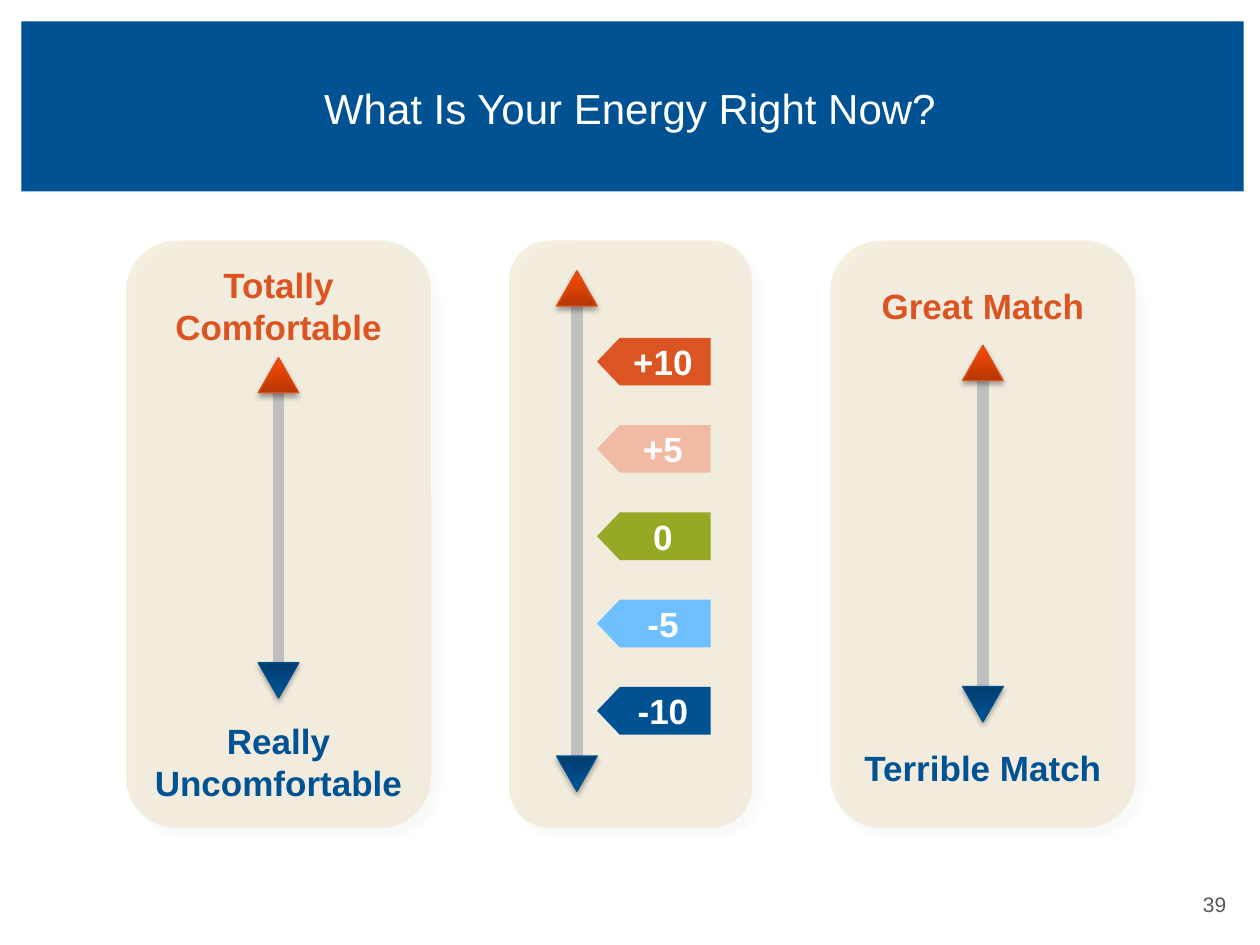
from lxml import etree
from pptx import Presentation
from pptx.dml.color import RGBColor
from pptx.enum.shapes import MSO_CONNECTOR, MSO_SHAPE
from pptx.enum.text import MSO_ANCHOR, PP_ALIGN
from pptx.oxml import parse_xml
from pptx.oxml.ns import nsdecls, qn
from pptx.util import Cm, Pt

RECTANGLE = MSO_SHAPE.RECTANGLE
ROUNDED = MSO_SHAPE.ROUNDED_RECTANGLE
TRIANGLE = MSO_SHAPE.ISOSCELES_TRIANGLE
TAG = MSO_SHAPE.FLOWCHART_OFFPAGE_CONNECTOR
STRAIGHT = MSO_CONNECTOR.STRAIGHT
MIDDLE = MSO_ANCHOR.MIDDLE
CENTER, RIGHT = PP_ALIGN.CENTER, PP_ALIGN.RIGHT

FONT = "Arial"
WHITE, GRAY, SHAFT = "FFFFFF", "595959", "BFBFBF"
BLUE, ORANGE, SAND = "005293", "DA5521", "EDE4CA"
ORANGE_HEAD = (("B73604", "EE4705", "F44501"), "DA511C")
BLUE_HEAD = (("003D6E", "004F8E", "00508F"), "005090")

PANEL_TOP, PANEL_HEIGHT = 4.85, 11.84
HEAD_WIDTH, HEAD_HEIGHT = 0.82, 0.71
TAG_WIDTH, TAG_HEIGHT = 2.29, 0.96
TAG_CENTER_X, FIRST_TAG_Y, TAG_PITCH = 13.18, 7.29, 1.76
LEVELS = (("+10", ORANGE), ("+5", "F1BAA5"), ("0", "97A825"),
          ("-5", "6EBFFF"), ("-10", BLUE))


def rgb(color):
    return RGBColor.from_string(color)


def add_block(slide, kind, left, top, width, height, color):
    block = slide.shapes.add_shape(kind, Cm(left), Cm(top), Cm(width), Cm(height))
    block.shadow.inherit = False
    block.fill.solid()
    block.fill.fore_color.rgb = rgb(color)
    block.line.fill.background()
    return block


def add_text(slide, text, left, top, width, height, size, color,
             bold=False, align=CENTER):
    box = slide.shapes.add_textbox(Cm(left), Cm(top), Cm(width), Cm(height))
    frame = box.text_frame
    frame.word_wrap = True
    frame.vertical_anchor = MIDDLE
    frame.text = text
    paragraph = frame.paragraphs[0]
    paragraph.alignment = align
    font = paragraph.runs[0].font
    font.name, font.size, font.bold = FONT, Pt(size), bold
    font.color.rgb = rgb(color)


def cast_shadow(block, opacity, blur, distance, angle):
    effects = block._element.spPr.find(qn("a:effectLst"))
    effects.append(parse_xml(
        f'<a:outerShdw {nsdecls("a")} blurRad="{Pt(blur)}" dist="{Pt(distance)}" '
        f'dir="{angle * 60000}" rotWithShape="0"><a:srgbClr val="000000">'
        f'<a:alpha val="{opacity * 1000}"/></a:srgbClr></a:outerShdw>'))


def shade(block, colors):
    """Fill from the base of the shape to its tip."""
    stops = "".join(f'<a:gs pos="{share * 1000}"><a:srgbClr val="{color}"/></a:gs>'
                    for share, color in zip((0, 80, 100), colors))
    solid = block._element.spPr.find(qn("a:solidFill"))
    solid.getparent().replace(solid, parse_xml(
        f'<a:gradFill {nsdecls("a")} rotWithShape="1"><a:gsLst>{stops}</a:gsLst>'
        '<a:lin ang="16200000" scaled="0"/></a:gradFill>'))


def add_panel(slide, left, width):
    panel = add_block(slide, ROUNDED, left, PANEL_TOP, width, PANEL_HEIGHT, SAND)
    color = panel._element.spPr.find(qn("a:solidFill"))[0]
    etree.SubElement(color, qn("a:alpha"), val="59000")
    cast_shadow(panel, 3, 4, 6, 45)


def add_head(slide, center_x, top, style, rotation):
    colors, outline = style
    head = add_block(slide, TRIANGLE, center_x - HEAD_WIDTH / 2, top,
                     HEAD_WIDTH, HEAD_HEIGHT, outline)
    head.rotation = rotation
    head.line.color.rgb = rgb(outline)
    head.line.width = Pt(0.75)
    shade(head, colors)
    cast_shadow(head, 35, 3.1, 1.8, 90)


def add_scale(slide, center_x, top, lower_head_top):
    """Vertical shaft with an orange head above and a blue head below."""
    shaft = slide.shapes.add_connector(STRAIGHT, Cm(center_x), Cm(top + HEAD_HEIGHT),
                                       Cm(center_x), Cm(lower_head_top))
    shaft.line.color.rgb = rgb(SHAFT)
    shaft.line.width = Pt(6.5)
    etree.SubElement(shaft._element.spPr, qn("a:effectLst"))
    add_head(slide, center_x, top, ORANGE_HEAD, 0)
    add_head(slide, center_x, lower_head_top, BLUE_HEAD, 180)


def add_labelled_panel(slide, left, scale, high, low, label_height):
    """high and low are (text, top) pairs."""
    width = 6.15
    center_x = left + width / 2
    add_panel(slide, left, width)
    add_scale(slide, center_x, *scale)
    for (text, top), label_width, color in ((high, 5.28, ORANGE), (low, 5.77, BLUE)):
        add_text(slide, text, center_x - label_width / 2, top,
                 label_width, label_height, 20, color, bold=True)


def add_level_panel(slide):
    add_panel(slide, 10.26, 4.9)
    add_scale(slide, 11.63, 5.46, 15.24)
    for index, (level, color) in enumerate(LEVELS):
        center_y = FIRST_TAG_Y + index * TAG_PITCH
        tag = add_block(slide, TAG, TAG_CENTER_X - TAG_HEIGHT / 2,
                        center_y - TAG_WIDTH / 2, TAG_HEIGHT, TAG_WIDTH, color)
        tag.rotation = 90
        add_text(slide, level, 12.4, center_y - 0.56, 1.93, 1.12, 20, WHITE, bold=True)


def main():
    deck = Presentation()
    deck.slide_width, deck.slide_height = Cm(25.4), Cm(19.05)
    slide = deck.slides.add_slide(deck.slide_layouts[6])
    add_block(slide, RECTANGLE, 0.43, 0.43, 24.64, 3.43, BLUE)
    add_text(slide, "What Is Your Energy Right Now?", 1.27, 0.76, 22.86, 2.84, 24, WHITE)
    add_labelled_panel(slide, 2.54, (7.21, 13.36), ("Totally Comfortable", 5.18),
                       ("Really Uncomfortable", 14.38), 1.96)
    add_level_panel(slide)
    add_labelled_panel(slide, 16.74, (6.96, 13.84), ("Great Match", 5.59),
                       ("Terrible Match", 14.91), 1.12)
    add_text(slide, "39", 19.05, 17.83, 5.92, 0.81, 12, GRAY, align=RIGHT)
    deck.save("out.pptx")


if __name__ == "__main__":
    main()
